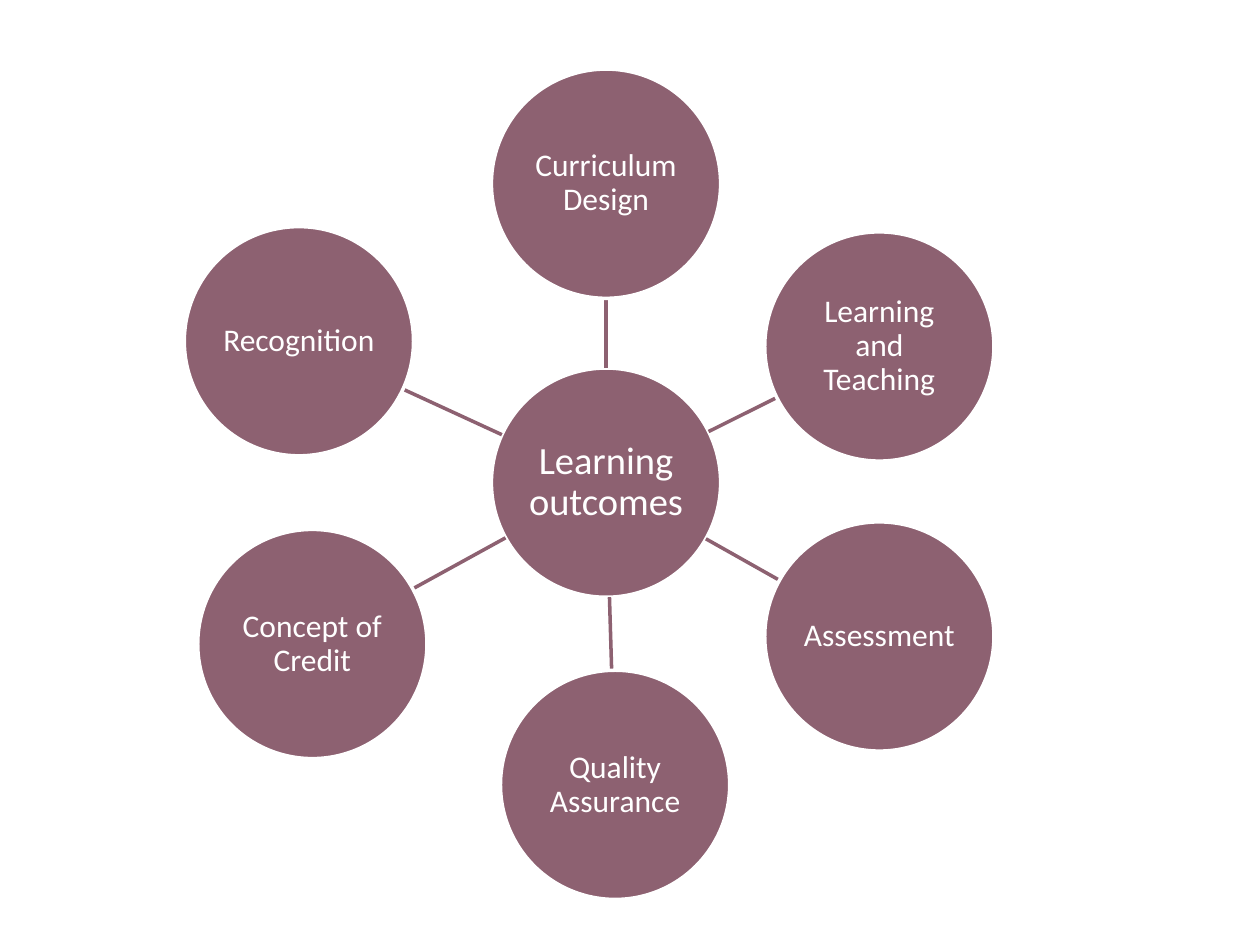
import math

import pptx
import pptx.dml.color
import pptx.enum.shapes
import pptx.enum.text
import pptx.oxml
import pptx.oxml.ns
import pptx.util

Pt = pptx.util.Pt
MAUVE = pptx.dml.color.RGBColor(0x8D, 0x61, 0x71)
WHITE = pptx.dml.color.RGBColor(0xFF, 0xFF, 0xFF)
FONT = "Calibri"
DIAMETER = 131

HUB = ("Learning outcomes", 346.3, 275.8)
TOPICS = [
    ("Curriculum Design", 346.3, 105),
    ("Assessment", 502.5, 363.7),
    ("Recognition", 170.8, 195),
    ("Learning and Teaching", 502.5, 198),
    ("Quality Assurance", 351.5, 448.5),
    ("Concept of Credit", 178.5, 368),
]


def add_circle(s, text, x, y, size, inset):
    sp = s.shapes.add_shape(
        pptx.enum.shapes.MSO_SHAPE.OVAL,
        Pt(x - DIAMETER / 2), Pt(y - DIAMETER / 2), Pt(DIAMETER), Pt(DIAMETER))
    sp.shadow.inherit = False
    sp.fill.solid()
    sp.fill.fore_color.rgb = MAUVE
    sp.line.color.rgb = WHITE
    sp.line.width = Pt(2)
    tf = sp.text_frame
    tf.word_wrap = True
    tf.vertical_anchor = pptx.enum.text.MSO_ANCHOR.MIDDLE
    tf.margin_left = tf.margin_right = tf.margin_top = tf.margin_bottom = Pt(inset)
    p = tf.paragraphs[0]
    p.alignment = pptx.enum.text.PP_ALIGN.CENTER
    p.line_spacing = 0.9
    r = p.add_run()
    r.text = text
    r.font.name = FONT
    r.font.size = Pt(size)
    r.font.color.rgb = WHITE


def add_spoke(s, x1, y1, x2, y2):
    share = DIAMETER / 2 / math.hypot(x2 - x1, y2 - y1)
    dx, dy = (x2 - x1) * share, (y2 - y1) * share
    line = s.shapes.add_connector(
        pptx.enum.shapes.MSO_CONNECTOR.STRAIGHT,
        Pt(x1 + dx), Pt(y1 + dy), Pt(x2 - dx), Pt(y2 - dy))
    line.line.color.rgb = MAUVE
    line.line.width = Pt(2)
    props = line._element.find(pptx.oxml.ns.qn("p:spPr"))
    pptx.oxml.ns.qn("a:effectLst")
    props.append(props.makeelement(pptx.oxml.ns.qn("a:effectLst"), {}))


def main():
    prs = pptx.Presentation()
    prs.slide_width, prs.slide_height = Pt(720), Pt(540)
    s = prs.slides.add_slide(prs.slide_layouts[6])
    add_circle(s, *HUB, size=22, inset=1.1)
    for text, x, y in TOPICS:
        add_spoke(s, *HUB[1:], x, y)
        add_circle(s, text, x, y, size=18, inset=0.9)
    prs.save("out.pptx")


if __name__ == "__main__":
    main()
